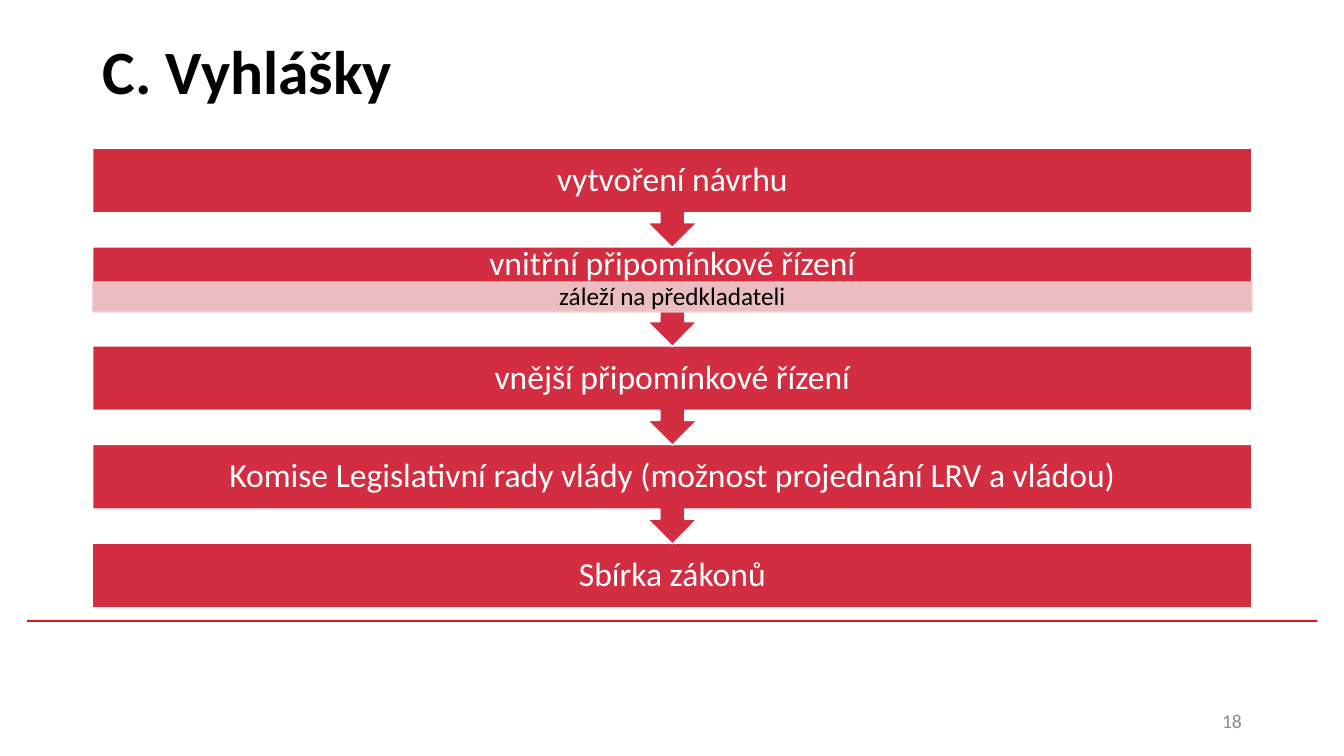
from pptx import Presentation
from pptx.dml.color import RGBColor
from pptx.enum.shapes import MSO_SHAPE as SHAPE
from pptx.enum.text import MSO_ANCHOR as ANCHOR, PP_ALIGN as ALIGN
from pptx.oxml.ns import qn
from pptx.util import Pt
from lxml.etree import SubElement

TITLE = "C. Vyhlášky"
STEPS = [
    ("vytvoření návrhu", None),
    ("vnitřní připomínkové řízení", "záleží na předkladateli"),
    ("vnější připomínkové řízení", None),
    ("Komise Legislativní rady vlády (možnost projednání LRV a vládou)", None),
    ("Sbírka zákonů", None),
]
PAGE = "18"
COLORS = {"red": "D22D40", "pink": "EECDCF", "rule": "CD1F21",
          "white": "FFFFFF", "black": "000000", "grey": "8C8C8C"}

LEFT, WIDTH = 66.24, 828
TOP, PITCH = 105.9, 70.55
BODY_H, CALLOUT_H = 46.1, 71
NOTE_Y, NOTE_H = 25, 21.4


def rgb(name):
    return RGBColor.from_string(COLORS[name])


def write(sp, text, size, color, align=ALIGN.CENTER, spacing=0.9,
          bold=False, margins=(0, 0, 0, 0)):
    tf = sp.text_frame
    left, top, right, bottom = map(Pt, margins)
    frame = {"word_wrap": True, "vertical_anchor": ANCHOR.MIDDLE,
             "margin_left": left, "margin_top": top,
             "margin_right": right, "margin_bottom": bottom}
    for key, value in frame.items():
        setattr(tf, key, value)
    p = tf.paragraphs[0]
    p.alignment, p.line_spacing = align, spacing
    r = p.add_run()
    r.text = text
    for key, value in {"name": "Calibri", "size": Pt(size), "bold": bold}.items():
        setattr(r.font, key, value)
    r.font.color.rgb = rgb(color)


def add_block(s, kind, box, fill, line=None, alpha=None):
    sp = s.shapes.add_shape(kind, *map(Pt, box))
    sp.shadow.inherit = False
    sp.fill.solid()
    sp.fill.fore_color.rgb = rgb(fill)
    if line:
        sp.line.color.rgb = rgb(line)
        sp.line.width = Pt(1)
    else:
        sp.line.fill.background()
    if alpha:
        for clr in sp._element.spPr.iter(qn("a:srgbClr")):
            SubElement(clr, qn("a:alpha")).set("val", str(alpha * 1000))
    return sp


def main():
    prs = Presentation()
    prs.slide_width, prs.slide_height = Pt(960), Pt(540)
    s = prs.slides.add_slide(prs.slide_layouts[5])

    add_block(s, SHAPE.RECTANGLE, (19.4, 442.8, 921.6, 1.5), "rule")

    title = s.shapes.title
    title.left, title.top, title.width, title.height = map(Pt, (LEFT, 1.4, WIDTH, 104.4))
    write(title, TITLE, 44, "black", ALIGN.LEFT, bold=True, margins=(7.2, 3.6, 7.2, 3.6))

    number = s.shapes.add_textbox(*map(Pt, (678.2, 500.4, 216, 28.8)))
    write(number, PAGE, 14, "grey", ALIGN.RIGHT, 1, margins=(7.2, 3.6, 7.2, 3.6))

    last = len(STEPS) - 1
    for i, (step, note) in reversed(list(enumerate(STEPS))):
        y = TOP + i * PITCH
        kind, height = ((SHAPE.RECTANGLE, BODY_H) if i == last
                        else (SHAPE.DOWN_ARROW_CALLOUT, CALLOUT_H))
        sp = add_block(s, kind, (LEFT, y, WIDTH, height), "red", "white")
        bottom = BODY_H - NOTE_Y if note else 0
        write(sp, step, 24, "white", margins=(13.7, 0, 13.7, bottom))
        if note:
            box = (LEFT, y + NOTE_Y, WIDTH, NOTE_H)
            sp = add_block(s, SHAPE.RECTANGLE, box, "pink", "pink", alpha=90)
            write(sp, note, 18, "black", margins=(10, 0, 10, 0))

    prs.save("out.pptx")


if __name__ == "__main__":
    main()
